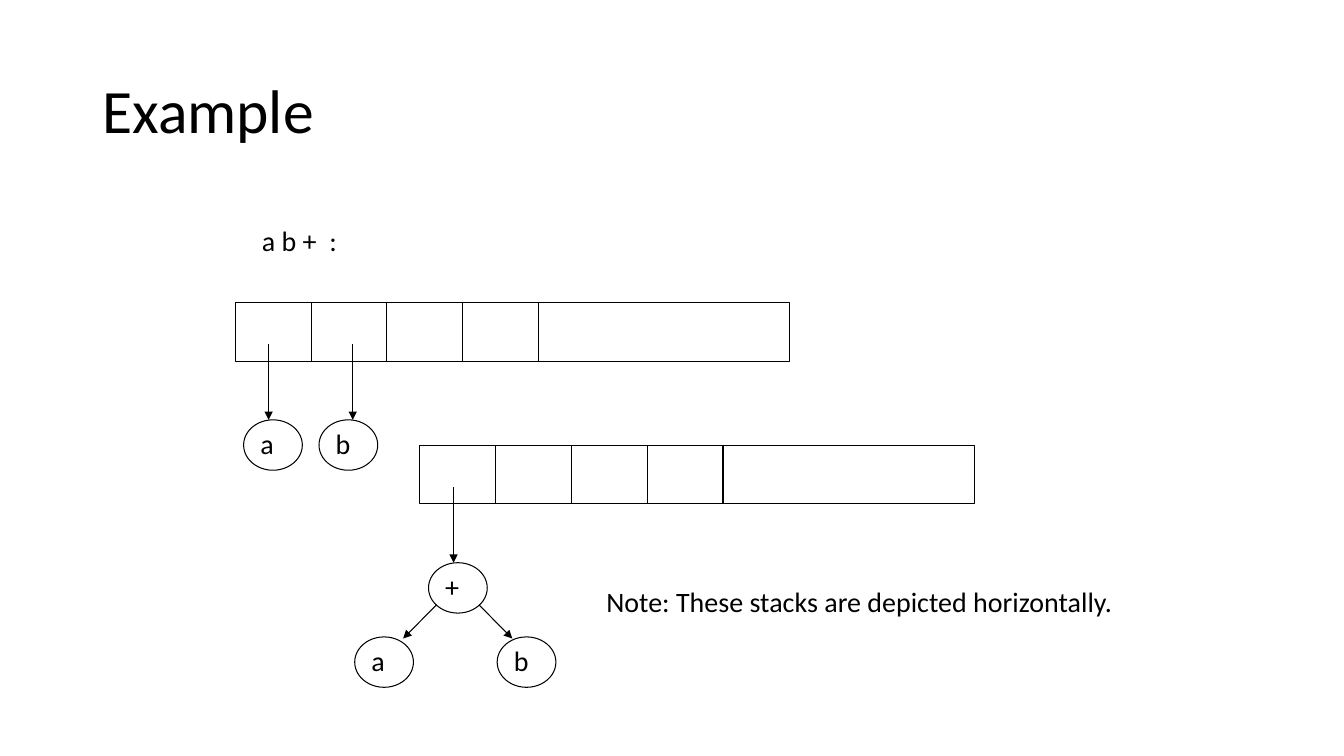
from lxml.etree import SubElement
from pptx import Presentation
from pptx.dml.color import RGBColor
from pptx.enum.shapes import MSO_CONNECTOR, MSO_SHAPE
from pptx.enum.text import MSO_ANCHOR, MSO_AUTO_SIZE
from pptx.oxml.ns import qn
from pptx.util import Cm, Pt

INK = RGBColor.from_string("000000")

deck = Presentation()
deck.slide_width, deck.slide_height = Cm(33.87), Cm(19.05)
page = deck.slides.add_slide(deck.slide_layouts[6])


def add_text(text, left, top, width, height, size=20):
    box = page.shapes.add_textbox(Cm(left), Cm(top), Cm(width), Cm(height))
    box.text_frame.word_wrap = False
    box.text_frame.auto_size = MSO_AUTO_SIZE.SHAPE_TO_FIT_TEXT
    para = box.text_frame.paragraphs[0]
    span = para.add_run()
    span.text = text
    span.font.name = "Calibri"
    span.font.size = Pt(size)
    span.font.color.rgb = INK
    return box


def add_line(x1, y1, x2, y2, arrow=False):
    line = page.shapes.add_connector(
        MSO_CONNECTOR.STRAIGHT, Cm(x1), Cm(y1), Cm(x2), Cm(y2))
    line.line.color.rgb = INK
    line.line.width = Pt(0.75)
    if arrow:
        SubElement(line.line._get_or_add_ln(), qn("a:tailEnd"), type="triangle")
    SubElement(line._element.spPr, qn("a:effectLst"))


# Title, expression and note
title = add_text("Example", 2.33, 1.01, 29.21, 3.68, size=44)
title.text_frame.word_wrap = True
title.text_frame.auto_size = MSO_AUTO_SIZE.NONE
title.text_frame.vertical_anchor = MSO_ANCHOR.MIDDLE
title.text_frame.paragraphs[0].line_spacing = 0.9
add_text("a b +  :", 6.35, 5.5, 2.47, 1.1)
add_text("Note: These stacks are depicted horizontally.", 15.03, 14.6, 13.39, 1.11)

# Outlines: two stacks, then the tree nodes
stacks = [(5.93, 7.62), (10.58, 11.22)]
nodes = [("a", 6.14, 10.58), ("b", 8.04, 10.58), ("+", 10.8, 14.18),
         ("a", 8.94, 16.05), ("b", 12.53, 16.05)]
outlines = [(MSO_SHAPE.RECTANGLE, left, top, 13.97, 1.48) for left, top in stacks]
outlines += [(MSO_SHAPE.OVAL, left, top, 1.48, 1.27) for _, left, top in nodes]
for kind, left, top, width, height in outlines:
    shape = page.shapes.add_shape(kind, Cm(left), Cm(top), Cm(width), Cm(height))
    shape.shadow.inherit = False
    shape.fill.background()
    shape.line.color.rgb = INK
    shape.line.width = Pt(0.75)

# Cell dividers
for left, top in stacks:
    for cell in range(1, 5):
        x = left + cell * 1.91
        add_line(x, top, x, top + 1.48)

# Node labels
for label, left, top in nodes:
    add_text(label, left + 0.17, top + 0.04, 0.87, 1.11)

# Pointers from cells down to nodes
for x, y in [(6.77, 8.68), (8.89, 8.68), (11.43, 12.28)]:
    add_line(x, y, x, y + 1.9, arrow=True)

# Branches of the + node
for start, end in [(11, 10.16), (12.07, 12.91)]:
    add_line(start, 15.24, end, 16.09, arrow=True)

deck.save("out.pptx")
